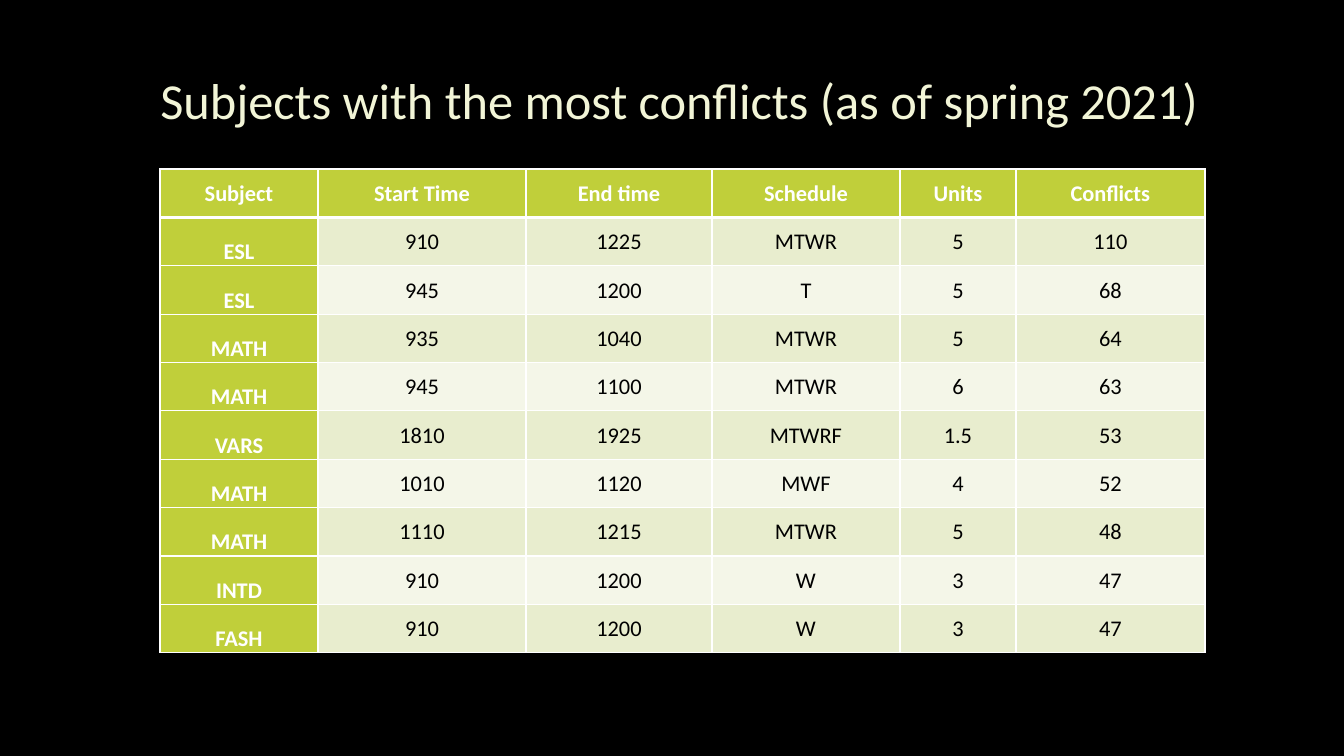
from lxml import etree
from pptx import Presentation
from pptx.dml.color import RGBColor
from pptx.enum.text import MSO_ANCHOR, PP_ALIGN
from pptx.oxml.ns import qn
from pptx.util import Pt

MIDDLE, BOTTOM = MSO_ANCHOR.MIDDLE, MSO_ANCHOR.BOTTOM
CENTER = PP_ALIGN.CENTER

# Content
TITLE = "Subjects with the most conflicts (as of spring 2021)"
HEADERS = ("Subject", "Start Time", "End time", "Schedule", "Units", "Conflicts")
CLASSES = [
    ("ESL", "910", "1225", "MTWR", "5", "110"),
    ("ESL", "945", "1200", "T", "5", "68"),
    ("MATH", "935", "1040", "MTWR", "5", "64"),
    ("MATH", "945", "1100", "MTWR", "6", "63"),
    ("VARS", "1810", "1925", "MTWRF", "1.5", "53"),
    ("MATH", "1010", "1120", "MWF", "4", "52"),
    ("MATH", "1110", "1215", "MTWR", "5", "48"),
    ("INTD", "910", "1200", "W", "3", "47"),
    ("FASH", "910", "1200", "W", "3", "47"),
]

# Layout in px
SLIDE_W, SLIDE_H = 1344, 756
TITLE_BOX = (114, 46, 1131, 107)
TABLE_LEFT, TABLE_TOP, TABLE_H = 160, 169, 484
COLUMN_WIDTHS = (158, 208, 186, 188, 116, 189)

# Style
FONT = "Calibri"
BLACK, WHITE, CREAM = "000000", "FFFFFF", "F2F5D7"
GREEN, BANDS = "C0CF3A", ("E8EDCE", "F4F6E8")
OUTLINE = "404040"


def px(length):
    return round(length * 914400 / 100.8)


def rgb(color):
    return RGBColor.from_string(color)


def line_xml(tag, color, points, alpha=100):
    line = etree.Element(qn(tag), w=str(Pt(points)))
    fill = etree.SubElement(line, qn("a:solidFill"))
    shade = etree.SubElement(fill, qn("a:srgbClr"), val=color)
    if alpha < 100:
        etree.SubElement(shade, qn("a:alpha"), val=str(alpha * 1000))
    return line


def write(frame, text, size, color, bold=False):
    paragraph = frame.paragraphs[0]
    paragraph.text = text
    paragraph.alignment = CENTER
    font = paragraph.font
    font.name, font.size, font.bold = FONT, Pt(size), bold
    font.color.rgb = rgb(color)
    return paragraph


def style_cell(cell, row, column):
    """Fill, inset and rule one cell according to its place in the grid."""
    is_label = row == 0 or column == 0
    cell.fill.solid()
    cell.fill.fore_color.rgb = rgb(GREEN if is_label else BANDS[(row - 1) % 2])
    cell.margin_left = cell.margin_right = cell.margin_top = px(1)
    cell.margin_bottom = 0
    cell.vertical_anchor = BOTTOM if row and column == 0 else MIDDLE
    widths = {"a:lnL": 1, "a:lnR": 1,
              "a:lnT": 3 if row == 1 else 1, "a:lnB": 3 if row == 0 else 1}
    properties = cell._tc.get_or_add_tcPr()
    for place, (tag, points) in enumerate(widths.items()):
        properties.insert(place, line_xml(tag, WHITE, points))
    return is_label


prs = Presentation()
prs.slide_width, prs.slide_height = px(SLIDE_W), px(SLIDE_H)
slide = prs.slides.add_slide(prs.slide_layouts[6])
slide.background.fill.solid()
slide.background.fill.fore_color.rgb = rgb(BLACK)

# Title with a faint outline
title = slide.shapes.add_textbox(*map(px, TITLE_BOX)).text_frame
title.word_wrap = True
title.vertical_anchor = MIDDLE
heading = write(title, TITLE, 36, CREAM)
heading.runs[0]._r.get_or_add_rPr().insert(0, line_xml("a:ln", OUTLINE, 0.75, 10))

# Conflicts table
rows = [HEADERS, *CLASSES]
table = slide.shapes.add_table(
    len(rows), len(HEADERS), px(TABLE_LEFT), px(TABLE_TOP),
    px(sum(COLUMN_WIDTHS)), px(TABLE_H)).table
for column, width in zip(table.columns, COLUMN_WIDTHS):
    column.width = px(width)
for r, values in enumerate(rows):
    table.rows[r].height = px(TABLE_H / len(rows))
    for c, value in enumerate(values):
        cell = table.cell(r, c)
        is_label = style_cell(cell, r, c)
        write(cell.text_frame, value, 16, WHITE if is_label else BLACK, is_label)

prs.save("out.pptx")
